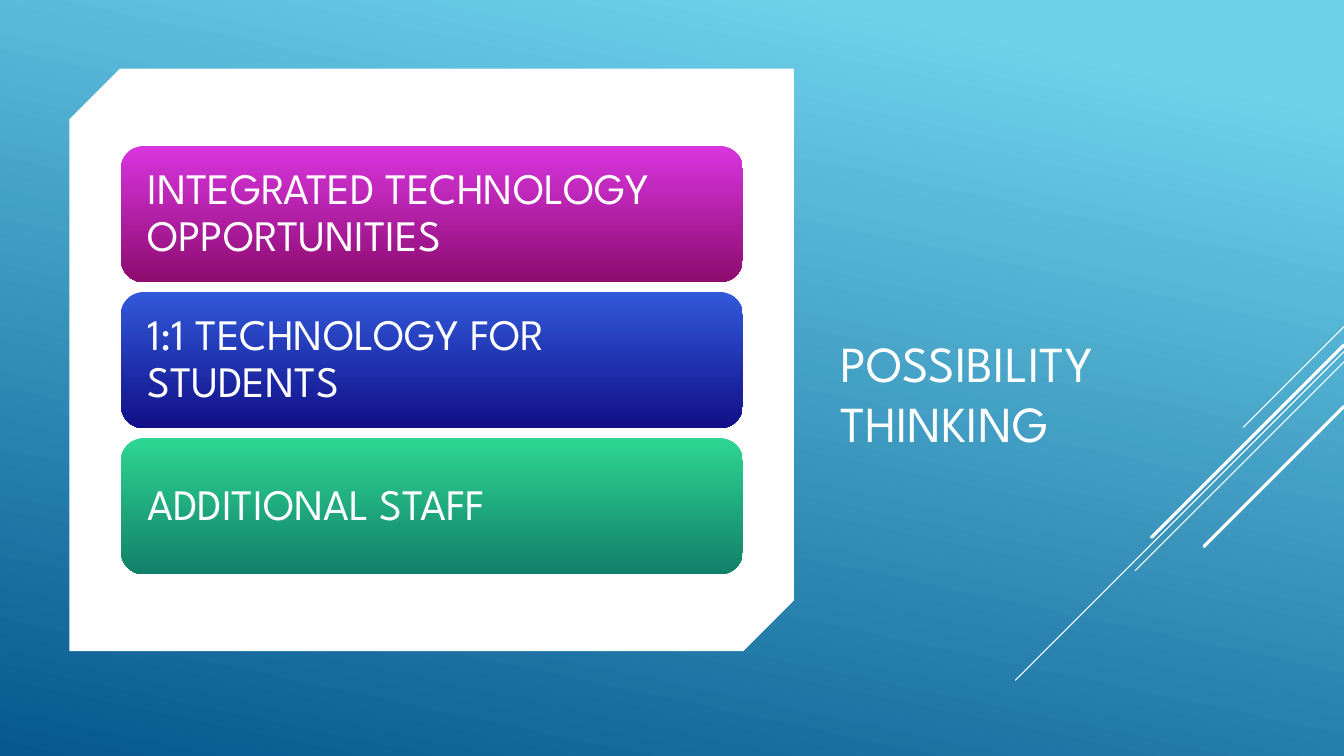
from dataclasses import dataclass

from lxml.etree import SubElement
from pptx import Presentation
from pptx.dml.color import RGBColor
from pptx.enum.shapes import MSO_CONNECTOR, MSO_SHAPE
from pptx.enum.text import MSO_ANCHOR, PP_ALIGN
from pptx.oxml.ns import qn
from pptx.util import Cm, Pt


@dataclass(frozen=True)
class Theme:
    font: str = "League Spartan"
    white: str = "FFFFFF"
    sky: tuple = ("6ED2EB", "06588E")
    magenta: tuple = ("D835DF", "8D0C6F")
    blue: tuple = ("3159DA", "110F87")
    green: tuple = ("2ED592", "11806A")
    title_size: int = 36
    card_size: int = 31
    thin: float = 0.75
    thick: float = 2.25


class SlideBuilder:
    def __init__(self, slide, theme):
        self.slide = slide
        self.theme = theme

    def shape(self, kind, left, top, width, height):
        sp = self.slide.shapes.add_shape(kind, Cm(left), Cm(top), Cm(width), Cm(height))
        sp.shadow.inherit = False
        sp.line.fill.background()
        return sp

    def solid(self, sp, color):
        sp.fill.solid()
        sp.fill.fore_color.rgb = RGBColor.from_string(color)

    def gradient(self, sp, colors, angle=90, start=0.0):
        sp.fill.gradient()
        sp.fill.gradient_angle = 360 - angle  # clockwise angle
        for stop, color, position in zip(sp.fill.gradient_stops, colors, (start, 1.0)):
            stop.color.rgb = RGBColor.from_string(color)
            stop.position = position

    def text(self, sp, text, size, anchor, inset, spacing=1.0):
        tf = sp.text_frame
        tf.text = text
        tf.word_wrap = True
        tf.vertical_anchor = anchor
        tf.margin_left = tf.margin_right = Cm(inset)
        p = tf.paragraphs[0]
        p.alignment = PP_ALIGN.LEFT
        p.line_spacing = spacing
        font = p.runs[0].font
        font.name = self.theme.font
        font.size = Pt(size)
        font.color.rgb = RGBColor.from_string(self.theme.white)

    def title(self, text, left, top, width, height):
        sp = self.slide.shapes.add_textbox(Cm(left), Cm(top), Cm(width), Cm(height))
        self.text(sp, text, self.theme.title_size, MSO_ANCHOR.BOTTOM, 0.25)

    def card(self, text, colors, left, top, width, height):
        sp = self.shape(MSO_SHAPE.ROUNDED_RECTANGLE, left, top, width, height)
        self.gradient(sp, colors)
        self.text(sp, text, self.theme.card_size, MSO_ANCHOR.MIDDLE, 0.5, 0.9)

    def diagonal(self, right, top, run, weight):
        """Draw a 45 degree line going down and left."""
        line = self.slide.shapes.add_connector(
            MSO_CONNECTOR.STRAIGHT, Cm(right), Cm(top), Cm(right - run), Cm(top + run))
        line.line.width = Pt(weight)
        line.line.color.rgb = RGBColor.from_string(self.theme.white)
        spPr = line._element.spPr
        spPr.get_or_add_ln().set("cap", "rnd")
        SubElement(spPr, qn("a:effectLst"))


def main():
    width, height = 33.87, 19.05
    theme = Theme()
    prs = Presentation()
    prs.slide_width, prs.slide_height = Cm(width), Cm(height)
    s = SlideBuilder(prs.slides.add_slide(prs.slide_layouts[6]), theme)

    # Background
    backdrop = s.shape(MSO_SHAPE.RECTANGLE, 0, 0, width, height)
    s.gradient(backdrop, theme.sky, angle=102, start=0.1)

    # Title
    s.title("POSSIBILITY THINKING", 20.93, 1.73, 10.16, 9.8)

    # White panel with two cut corners
    panel = s.shape(MSO_SHAPE.SNIP_2_DIAG_RECTANGLE, 1.75, 1.73, 18.26, 14.68)
    panel.adjustments[0] = 0.087
    panel.adjustments[1] = 0
    s.solid(panel, theme.white)

    # Diagonal lines running off the right edge: top, run, weight
    for top, run, weight in (
        (8.23, 2.54, theme.thin),
        (8.86, 8.28, theme.thin),
        (9.12, 5.26, theme.thin),
        (8.69, 4.85, theme.thick),
        (10.24, 3.53, theme.thick),
    ):
        s.diagonal(width, top, run, weight)

    # Stacked cards
    cards = (
        ("INTEGRATED TECHNOLOGY OPPORTUNITIES", theme.magenta),
        ("1:1 TECHNOLOGY FOR STUDENTS", theme.blue),
        ("ADDITIONAL STAFF", theme.green),
    )
    for i, (text, colors) in enumerate(cards):
        s.card(text, colors, 3.05, 3.68 + i * 3.68, 15.67, 3.43)

    prs.save("out.pptx")


if __name__ == "__main__":
    main()
